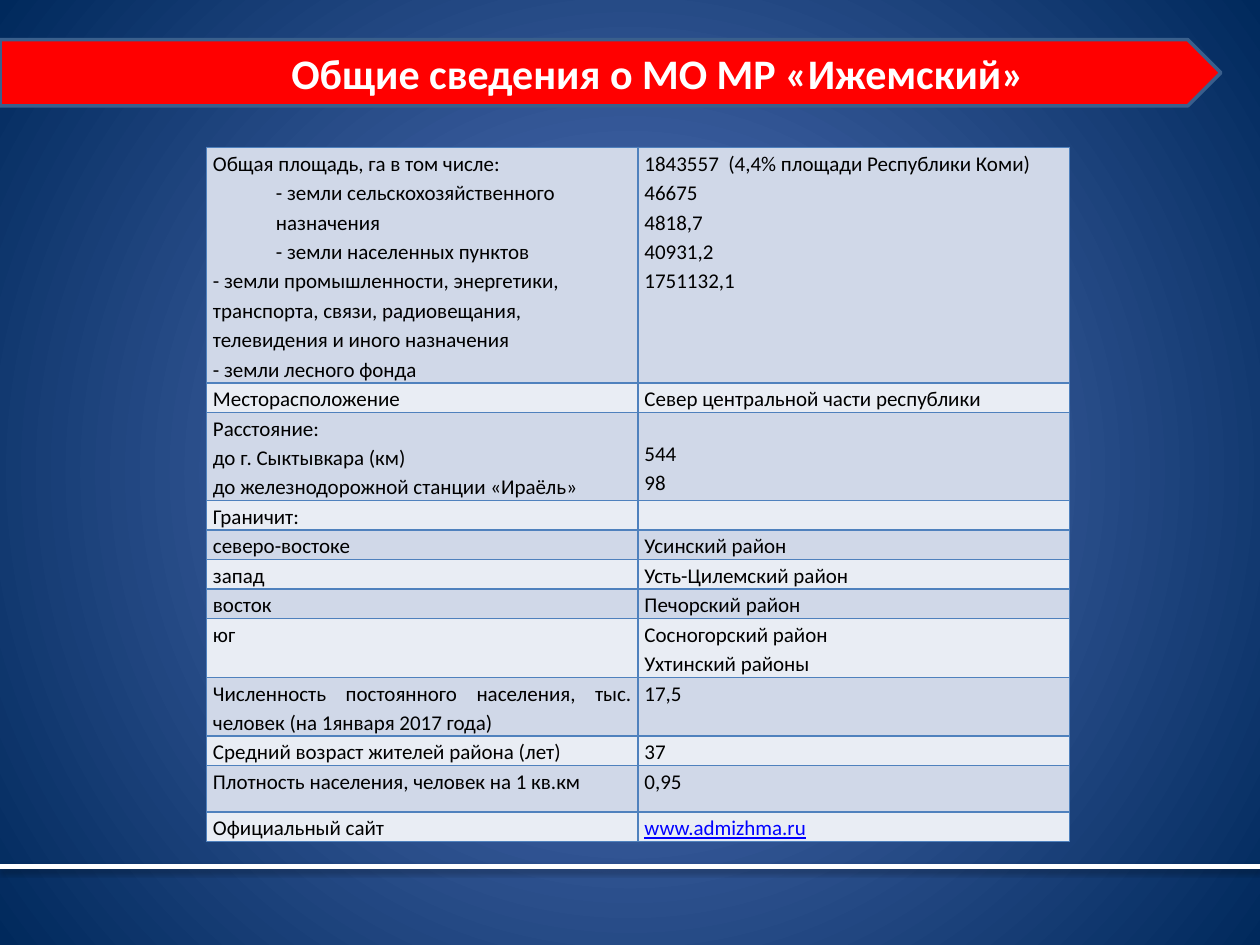
from dataclasses import dataclass

from lxml import etree
from pptx import Presentation
from pptx.dml.color import RGBColor
from pptx.enum.shapes import MSO_CONNECTOR, MSO_SHAPE
from pptx.enum.text import MSO_ANCHOR, PP_ALIGN
from pptx.oxml import parse_xml
from pptx.oxml.ns import nsdecls, qn
from pptx.util import Emu, Inches, Pt

HOME_PLATE = MSO_SHAPE.PENTAGON
STRAIGHT = MSO_CONNECTOR.STRAIGHT
MIDDLE = MSO_ANCHOR.MIDDLE
LEFT, CENTER, JUSTIFY = PP_ALIGN.LEFT, PP_ALIGN.CENTER, PP_ALIGN.JUSTIFY

WIDTH, HEIGHT = Inches(10), Inches(7.5)
FONT = "Calibri"
LINE_HEIGHT = Inches(0.23)
BANDS = ("D0D8E8", "E9EDF4")
BORDER = "4F81BD"
LINK = "0000FF"


@dataclass(frozen=True)
class Line:
    text: str
    align: PP_ALIGN = LEFT
    indent: float = 0
    link: bool = False


@dataclass(frozen=True)
class Fact:
    labels: tuple[Line, ...]
    values: tuple[Line, ...]
    lines: float = 1
    value_top: float = 0


def fact(label: str, *values: str, lines: float = 1) -> Fact:
    return Fact((Line(label, JUSTIFY),), tuple(map(Line, values)), lines)


FACTS = (
    Fact(
        (
            Line("Общая площадь, га в том числе:", JUSTIFY),
            Line("- земли сельскохозяйственного назначения", indent=0.5),
            Line("- земли населенных пунктов", indent=0.5),
            Line("- земли промышленности, энергетики, транспорта, связи, "
                 "радиовещания, телевидения и иного назначения"),
            Line("- земли лесного фонда"),
        ),
        tuple(map(Line, ("1843557  (4,4% площади Республики Коми)",
                         "46675", "4818,7", "40931,2", "1751132,1"))),
        lines=8,
    ),
    fact("Месторасположение", "Север центральной части республики"),
    Fact(
        (
            Line("Расстояние:", JUSTIFY),
            Line("до г. Сыктывкара (км)", JUSTIFY),
            Line("до железнодорожной станции «Ираёль»", JUSTIFY),
        ),
        (Line("544"), Line("98")),
        lines=3,
        value_top=0.2,
    ),
    fact("Граничит:", ""),
    fact("северо-востоке", "Усинский район"),
    fact("запад", "Усть-Цилемский район"),
    fact("восток", "Печорский район"),
    fact("юг", "Сосногорский район", "Ухтинский районы", lines=2),
    fact("Численность постоянного населения, тыс. человек "
         "(на 1января 2017 года)", "17,5", lines=2),
    fact("Средний возраст жителей района (лет)", "37"),
    fact("Плотность населения, человек на 1 кв.км", "0,95", lines=1.6),
    Fact((Line("Официальный сайт", JUSTIFY),),
         (Line("www.admizhma.ru", link=True),)),
)


def color(value: str) -> RGBColor:
    return RGBColor.from_string(value)


def across(share: float) -> Emu:
    return Emu(round(WIDTH * share))


def down(share: float) -> Emu:
    return Emu(round(HEIGHT * share))


def paint_background(slide) -> None:
    fill = slide.background.fill
    fill.gradient()
    for stop, position, tone in zip(fill.gradient_stops, (0, 1), ("5E7CC5", "00295C")):
        stop.position = position
        stop.color.rgb = color(tone)
    linear = next(slide.element.iter(qn("a:lin")))
    radial = parse_xml(
        f'<a:path {nsdecls("a")} path="circle">'
        '<a:fillToRect l="50000" t="50000" r="50000" b="50000"/></a:path>'
    )
    linear.getparent().replace(linear, radial)


def add_heading(slide, text: str) -> None:
    top, height = down(0.042), down(0.07)
    title = slide.shapes.title
    title.left, title.top = across(0.172), top
    title.width, title.height = across(0.7), height
    frame = title.text_frame
    frame.text = text
    frame.vertical_anchor = MIDDLE
    frame.margin_top = frame.margin_bottom = 0
    paragraph = frame.paragraphs[0]
    paragraph.alignment = CENTER
    font = paragraph.font
    font.name, font.size, font.bold = FONT, Pt(24), True
    font.color.rgb = color("FFFFFF")

    ribbon = slide.shapes.add_shape(HOME_PLATE, 0, top, across(0.969), height)
    ribbon.shadow.inherit = False
    ribbon.fill.solid()
    ribbon.fill.fore_color.rgb = color("FF0000")
    ribbon.line.color.rgb = color("3A5F8C")
    ribbon.line.width = Pt(2)
    title.element.addprevious(ribbon.element)


def add_borders(cell) -> None:
    properties = cell._tc.get_or_add_tcPr()
    for index, side in enumerate(("lnL", "lnR", "lnT", "lnB")):
        properties.insert(index, parse_xml(
            f'<a:{side} {nsdecls("a")} w="{Pt(1)}"><a:solidFill>'
            f'<a:srgbClr val="{BORDER}"/></a:solidFill></a:{side}>'
        ))


def fill_cell(cell, lines: tuple[Line, ...], band: str, top: float = 0) -> None:
    cell.margin_left = cell.margin_right = Inches(0.05)
    cell.margin_top, cell.margin_bottom = Inches(top), 0
    cell.fill.solid()
    cell.fill.fore_color.rgb = color(band)
    add_borders(cell)
    frame = cell.text_frame
    frame.text = "\n".join(line.text for line in lines)
    for paragraph, line in zip(frame.paragraphs, lines):
        paragraph.alignment = line.align
        paragraph.line_spacing = 1.15
        font = paragraph.font
        font.name, font.size, font.underline = FONT, Pt(12), line.link
        font.color.rgb = color(LINK if line.link else "000000")
        if line.indent:
            paragraph._p.get_or_add_pPr().set("marL", str(Inches(line.indent)))
        if not line.text:
            etree.SubElement(paragraph._p, qn("a:endParaRPr"), sz="1200")


def add_facts(slide, facts: tuple[Fact, ...]) -> None:
    height = Emu(round(LINE_HEIGHT * sum(item.lines for item in facts)))
    table = slide.shapes.add_table(
        len(facts), 2, across(0.164), down(0.156), across(0.685), height
    ).table
    table.first_row = table.horz_banding = False
    for index, item in enumerate(facts):
        table.rows[index].height = Emu(round(LINE_HEIGHT * item.lines))
        band = BANDS[index % 2]
        fill_cell(table.cell(index, 0), item.labels, band)
        fill_cell(table.cell(index, 1), item.values, band, item.value_top)


def add_footer_rule(slide) -> None:
    level = down(0.917)
    rule = slide.shapes.add_connector(STRAIGHT, WIDTH, level, 0, level)
    rule.line.color.rgb = color("FFFFFF")
    rule.line.width = Pt(3)
    rule.element.spPr.append(parse_xml(
        f'<a:effectLst {nsdecls("a")}>'
        f'<a:outerShdw blurRad="{Pt(3.1)}" dist="{Pt(1.8)}" dir="5400000" rotWithShape="0">'
        '<a:srgbClr val="000000"><a:alpha val="35000"/></a:srgbClr>'
        '</a:outerShdw></a:effectLst>'
    ))


def main() -> None:
    presentation = Presentation()
    presentation.slide_width, presentation.slide_height = WIDTH, HEIGHT
    title_only = presentation.slide_layouts[5]
    slide = presentation.slides.add_slide(title_only)
    paint_background(slide)
    add_heading(slide, "Общие сведения о МО МР «Ижемский»")
    add_facts(slide, FACTS)
    add_footer_rule(slide)
    presentation.save("out.pptx")


if __name__ == "__main__":
    main()
